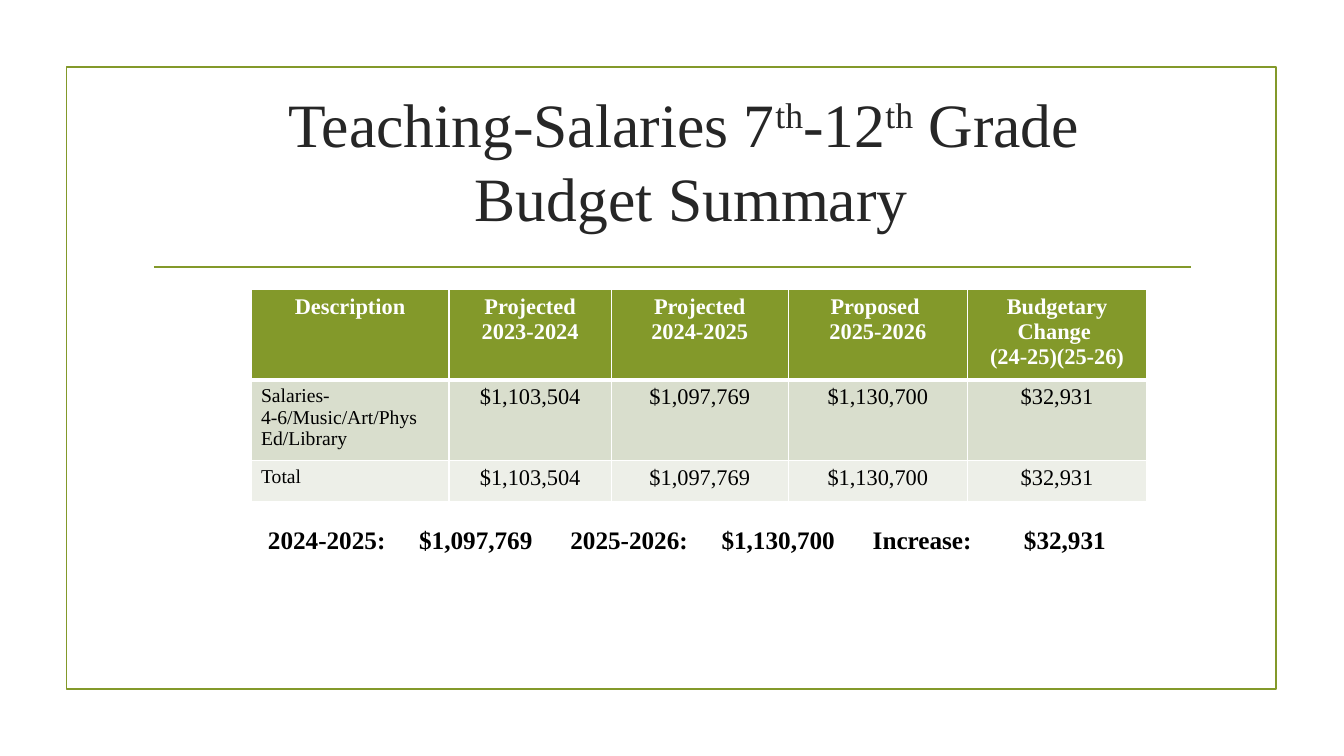
"""Build the teaching salaries budget slide for grades 7 to 12."""
from dataclasses import dataclass

from lxml.etree import SubElement as Sub
from pptx import Presentation
from pptx.dml.color import RGBColor as RGB
from pptx.enum.shapes import MSO_CONNECTOR as Conn, MSO_SHAPE as Kind
from pptx.enum.text import MSO_ANCHOR as Anchor, PP_ALIGN as Align
from pptx.oxml import parse_xml
from pptx.oxml.ns import nsdecls, qn
from pptx.util import Pt

TITLE = ["Teaching-Salaries 7^th^-12^th^ Grade \nBudget Summary"]
HEADS = [
    ["Description"],
    ["Projected", "2023-2024"],
    ["Projected", "2024-2025"],
    ["Proposed ", "2025-2026"],
    ["Budgetary Change ", "(24-25)(25-26)"],
]
SUMS = ["$1,103,504", "$1,097,769", "$1,130,700", "$32,931"]
LABELS = [["Salaries-", "4-6/Music/Art/Phys Ed/Library"], ["Total"]]
TOTALS = ["2024-2025:", "$1,097,769", "2025-2026:", "$1,130,700", "Increase:", "$32,931"]
WIDTHS = [141.5, 115.8, 126.5, 128, 128]
HEIGHTS = [60, 53.5, 29.5]
TAB = 108


@dataclass
class Theme:
    font: str = "Times New Roman"
    green: str = "83992A"
    dark: str = "262626"
    black: str = "000000"
    white: str = "FFFFFF"
    bands: tuple = ("D9DECD", "EDEFE8")
    title: int = 44
    total: int = 18
    body: int = 16
    label: int = 14
    rule: float = 1.25


T = Theme()


def write(frame, lines, size=T.body, color=T.black, bold=False, align=Align.CENTER):
    """Fill a text frame; carets enclose superscripts, newlines break lines."""
    for i, line in enumerate(lines):
        para = frame.add_paragraph() if i else frame.paragraphs[0]
        para.alignment = align
        for j, row in enumerate(line.split("\n")):
            if j:
                para.add_line_break()
            for k, part in enumerate(row.split("^")):
                run = para.add_run()
                run.text = part
                font = run.font
                font.name, font.size, font.bold = T.font, Pt(size), bold
                font.color.rgb = RGB.from_string(color)
                if k % 2:
                    run._r.get_or_add_rPr().set("baseline", "30000")


def edge(cell, top, base):
    """Give a cell white borders, with its own top and bottom widths."""
    props = cell._tc.get_or_add_tcPr()
    for i, (side, width) in enumerate(zip("LRTB", (1, 1, top, base))):
        props.insert(i, parse_xml(
            f'<a:ln{side} {nsdecls("a")} w="{Pt(width)}"><a:solidFill>'
            f'<a:srgbClr val="{T.white}"/></a:solidFill></a:ln{side}>'))


def box(slide, left, top, width, height, wrap=True):
    """Add a text box and return its frame."""
    frame = slide.shapes.add_textbox(Pt(left), Pt(top), Pt(width), Pt(height)).text_frame
    frame.word_wrap = wrap
    return frame


def ink(line):
    """Draw a line in the theme green."""
    line.color.rgb = RGB.from_string(T.green)
    line.width = Pt(T.rule)


def grid(slide):
    """Add the salary table."""
    table = slide.shapes.add_table(
        len(HEIGHTS), len(WIDTHS), Pt(179.3), Pt(206.6),
        Pt(sum(WIDTHS)), Pt(sum(HEIGHTS))).table
    for col, width in zip(table.columns, WIDTHS):
        col.width = Pt(width)
    rows = [HEADS] + [[label] + [[s] for s in SUMS] for label in LABELS]
    for r, (row, fill) in enumerate(zip(rows, (T.green, *T.bands))):
        table.rows[r].height = Pt(HEIGHTS[r])
        for c, lines in enumerate(row):
            cell = table.cell(r, c)
            cell.fill.solid()
            cell.fill.fore_color.rgb = RGB.from_string(fill)
            edge(cell, 3 if r == 1 else 1, 1 if r else 3)
            if r == 0:
                write(cell.text_frame, lines, color=T.white, bold=True)
            elif c == 0:
                write(cell.text_frame, lines, size=T.label, align=Align.LEFT)
            else:
                write(cell.text_frame, lines)


def main():
    deck = Presentation()
    deck.slide_width, deck.slide_height = Pt(960), Pt(540)
    slide = deck.slides.add_slide(deck.slide_layouts[6])

    frame = slide.shapes.add_shape(Kind.RECTANGLE, Pt(47.5), Pt(48), Pt(864), Pt(444))
    frame.shadow.inherit = False
    frame.fill.background()
    ink(frame.line)

    rule = slide.shapes.add_connector(Conn.STRAIGHT, Pt(110), Pt(190.8), Pt(850.5), Pt(190.8))
    Sub(rule._element.spPr, qn("a:effectLst"))
    ink(rule.line)
    Sub(rule._element.spPr, qn("a:effectLst")) if rule._element.spPr[-1].tag == qn("a:ln") else None

    title = box(slide, 116, 62.6, 756, 103)
    title.vertical_anchor = Anchor.MIDDLE
    write(title, TITLE, size=T.title, color=T.dark)

    grid(slide)

    total = box(slide, 184.3, 370.8, 619, 29, wrap=False)
    tabs = Sub(total.paragraphs[0]._p.get_or_add_pPr(), qn("a:tabLst"))
    for i in range(1, len(TOTALS)):
        Sub(tabs, qn("a:tab"), pos=str(Pt(i * TAB)), algn="l")
    write(total, ["\t".join(TOTALS)], size=T.total, bold=True, align=Align.LEFT)

    deck.save("out.pptx")


if __name__ == "__main__":
    main()
